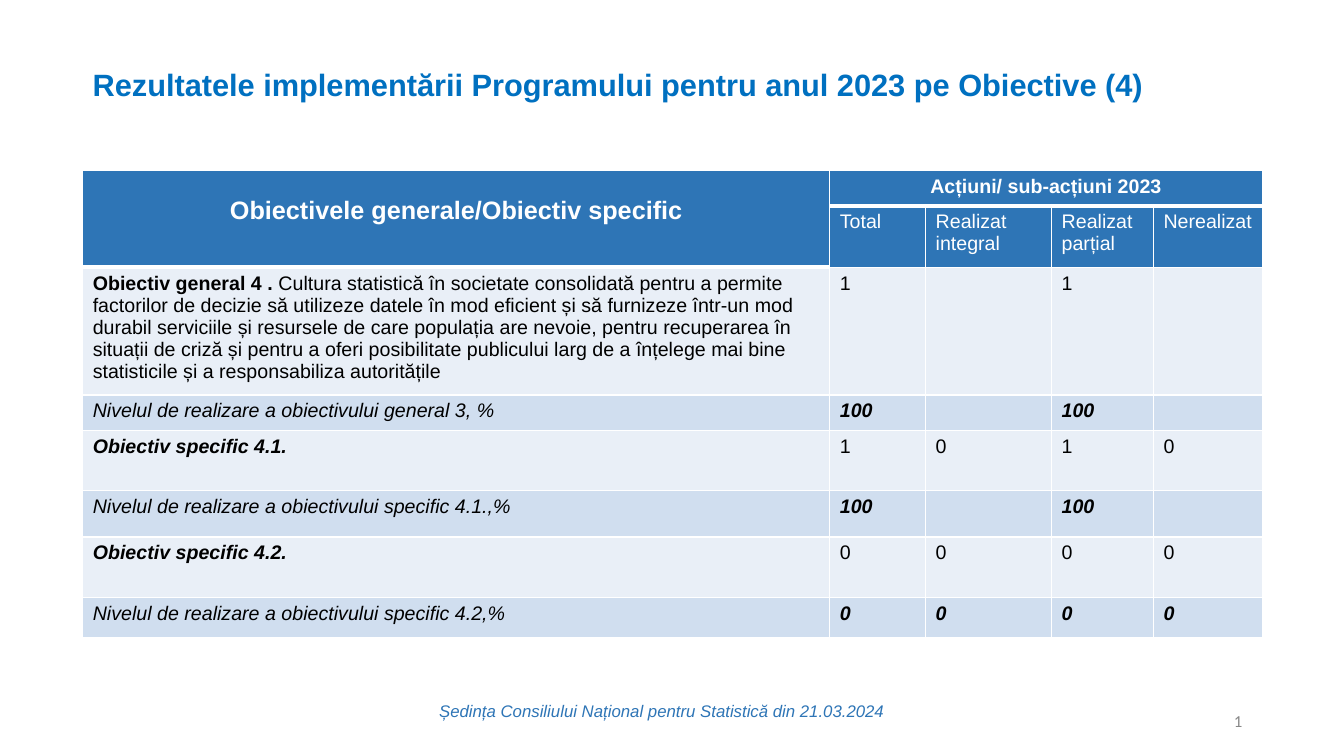
from dataclasses import dataclass

from lxml import etree
from pptx import Presentation
from pptx.dml.color import RGBColor
from pptx.enum.text import MSO_ANCHOR, MSO_AUTO_SIZE, PP_ALIGN
from pptx.oxml.ns import qn
from pptx.util import Inches, Pt

LEFT, CENTER, RIGHT = PP_ALIGN.LEFT, PP_ALIGN.CENTER, PP_ALIGN.RIGHT
TOP, MIDDLE = MSO_ANCHOR.TOP, MSO_ANCHOR.MIDDLE
FIT_SHAPE = MSO_AUTO_SIZE.SHAPE_TO_FIT_TEXT


@dataclass(frozen=True)
class Theme:
    font: str = "Arial"
    number_font: str = "Calibri"
    title: str = "0070C0"
    header: str = "2E75B6"
    light_band: str = "E9EFF7"
    dark_band: str = "D0DEEF"
    white: str = "FFFFFF"
    black: str = "000000"
    gray: str = "888888"
    title_size: int = 22
    heading_size: int = 18
    body_size: int = 14
    small_size: int = 12


THEME = Theme()

COLUMN_WIDTHS = [7.41, 0.95, 1.25, 1.01, 1.08]
ROW_HEIGHTS = [0.35, 0.6, 1.19, 0.35, 0.6, 0.46, 0.6, 0.4]
COLUMN_HEADINGS = ["Total", "Realizat integral", "Realizat parțial", "Nerealizat"]
GENERAL_OBJECTIVE = (
    " Cultura statistică în societate consolidată pentru a permite factorilor de decizie "
    "să utilizeze datele în mod eficient și să furnizeze într-un mod durabil serviciile și "
    "resursele de care populația are nevoie, pentru recuperarea în situații de criză și "
    "pentru a oferi posibilitate publicului larg de a înțelege mai bine statisticile și a "
    "responsabiliza autoritățile"
)
# Each objective: bold label, description, action counts, level label, level values
OBJECTIVES = [
    ("Obiectiv general 4 .", GENERAL_OBJECTIVE, ["1", "", "1", ""],
     "Nivelul de realizare a obiectivului general 3, %", ["100", "", "100", ""]),
    ("Obiectiv specific 4.1.", "", ["1", "0", "1", "0"],
     "Nivelul de realizare a obiectivului specific 4.1.,%", ["100", "", "100", ""]),
    ("Obiectiv specific 4.2.", "", ["0", "0", "0", "0"],
     "Nivelul de realizare a obiectivului specific 4.2,%", ["0", "0", "0", "0"]),
]


def write_text(paragraph, text, *, size=THEME.body_size, color=THEME.black, font=THEME.font,
               bold=False, italic=False, align=LEFT):
    paragraph.alignment = align
    run = paragraph.add_run()
    run.text = text
    run.font.name = font
    run.font.size = Pt(size)
    run.font.bold = bold
    run.font.italic = italic
    run.font.color.rgb = RGBColor.from_string(color)
    return run


def add_text_box(slide, text, left, top, width, height, *, anchor=TOP, grow=False, **text_format):
    text_box = slide.shapes.add_textbox(Inches(left), Inches(top), Inches(width), Inches(height))
    frame = text_box.text_frame
    frame.word_wrap = True
    frame.vertical_anchor = anchor
    if grow:
        frame.auto_size = FIT_SHAPE
    return write_text(frame.paragraphs[0], text, **text_format)


def add_slide_number(slide, number):
    run = add_text_box(slide, number, 9.42, 6.95, 3, 0.4, anchor=MIDDLE, align=RIGHT,
                       size=THEME.small_size, color=THEME.gray, font=THEME.number_font)
    # A field has the same content as a run, plus its id and type
    field = run._r
    field.tag = qn("a:fld")
    field.set("id", "{B6F15528-21DE-4FAA-801E-634DDDAF4B2B}")
    field.set("type", "slidenum")


def style_cell(cell, fill, bottom_width=1):
    properties = cell._tc.get_or_add_tcPr()
    for side, width in (("L", 1), ("R", 1), ("T", 1), ("B", bottom_width)):
        line = etree.SubElement(properties, qn(f"a:ln{side}"), w=str(Pt(width)))
        line_fill = etree.SubElement(line, qn("a:solidFill"))
        etree.SubElement(line_fill, qn("a:srgbClr"), val=THEME.white)
    cell.fill.solid()
    cell.fill.fore_color.rgb = RGBColor.from_string(fill)


def write_cell(cell, text, **text_format):
    if text:
        write_text(cell.text_frame.paragraphs[0], text, **text_format)


def shrink_empty_cells(table):
    """Keep empty cells at body size so that they do not stretch their rows."""
    for cell in table.iter_cells():
        paragraph = cell.text_frame.paragraphs[0]
        if not paragraph.runs:
            etree.SubElement(paragraph._p, qn("a:endParaRPr"), sz=str(THEME.body_size * 100))


def fill_header(table):
    for row in range(2):
        for column in range(len(COLUMN_WIDTHS)):
            thick = row == 0 or column == 0
            style_cell(table.cell(row, column), THEME.header, 3 if thick else 1)

    objectives_cell = table.cell(0, 0)
    objectives_cell.merge(table.cell(1, 0))
    objectives_cell.margin_top = Inches(0.26)
    write_cell(objectives_cell, "Obiectivele generale/Obiectiv specific", bold=True,
               size=THEME.heading_size, color=THEME.white, align=CENTER)

    actions_cell = table.cell(0, 1)
    actions_cell.merge(table.cell(0, 4))
    write_cell(actions_cell, "Acțiuni/ sub-acțiuni 2023", bold=True, color=THEME.white,
               align=CENTER)
    for column, heading in enumerate(COLUMN_HEADINGS, start=1):
        write_cell(table.cell(1, column), heading, color=THEME.white)


def fill_row(table, row, label, values, fill, label_format, value_format):
    for column, text in enumerate([label, *values]):
        cell = table.cell(row, column)
        style_cell(cell, fill)
        write_cell(cell, text, **(value_format if column else label_format))


def add_results_table(slide):
    frame = slide.shapes.add_table(len(ROW_HEIGHTS), len(COLUMN_WIDTHS), Inches(0.82),
                                   Inches(1.69), Inches(sum(COLUMN_WIDTHS)),
                                   Inches(sum(ROW_HEIGHTS)))
    table = frame.table
    for column, width in zip(table.columns, COLUMN_WIDTHS):
        column.width = Inches(width)
    for row, height in zip(table.rows, ROW_HEIGHTS):
        row.height = Inches(height)

    fill_header(table)
    for index, (label, description, counts, level_label, levels) in enumerate(OBJECTIVES):
        row = 2 + 2 * index
        fill_row(table, row, label, counts, THEME.light_band,
                 {"bold": True, "italic": not description}, {})
        write_cell_paragraph = table.cell(row, 0).text_frame.paragraphs[0]
        if description:
            write_text(write_cell_paragraph, description)
        fill_row(table, row + 1, level_label, levels, THEME.dark_band,
                 {"italic": True}, {"bold": True, "italic": True})
    shrink_empty_cells(table)


def main():
    presentation = Presentation()
    presentation.slide_width = Inches(13.33)
    presentation.slide_height = Inches(7.5)
    slide = presentation.slides.add_slide(presentation.slide_layouts[6])

    # Title
    add_text_box(slide, "Rezultatele implementării Programului pentru anul 2023 pe Obiective (4)",
                 0.82, 0.6, 10.75, 0.47, grow=True, size=THEME.title_size, color=THEME.title,
                 bold=True)

    # Results by objective
    add_results_table(slide)

    # Footer
    add_text_box(slide, "Ședința Consiliului Național pentru Statistică din 21.03.2024",
                 3.23, 6.9, 6.67, 0.3, grow=True, size=THEME.small_size, color=THEME.header,
                 italic=True, align=CENTER)
    add_slide_number(slide, "7")

    presentation.save("out.pptx")


if __name__ == "__main__":
    main()
